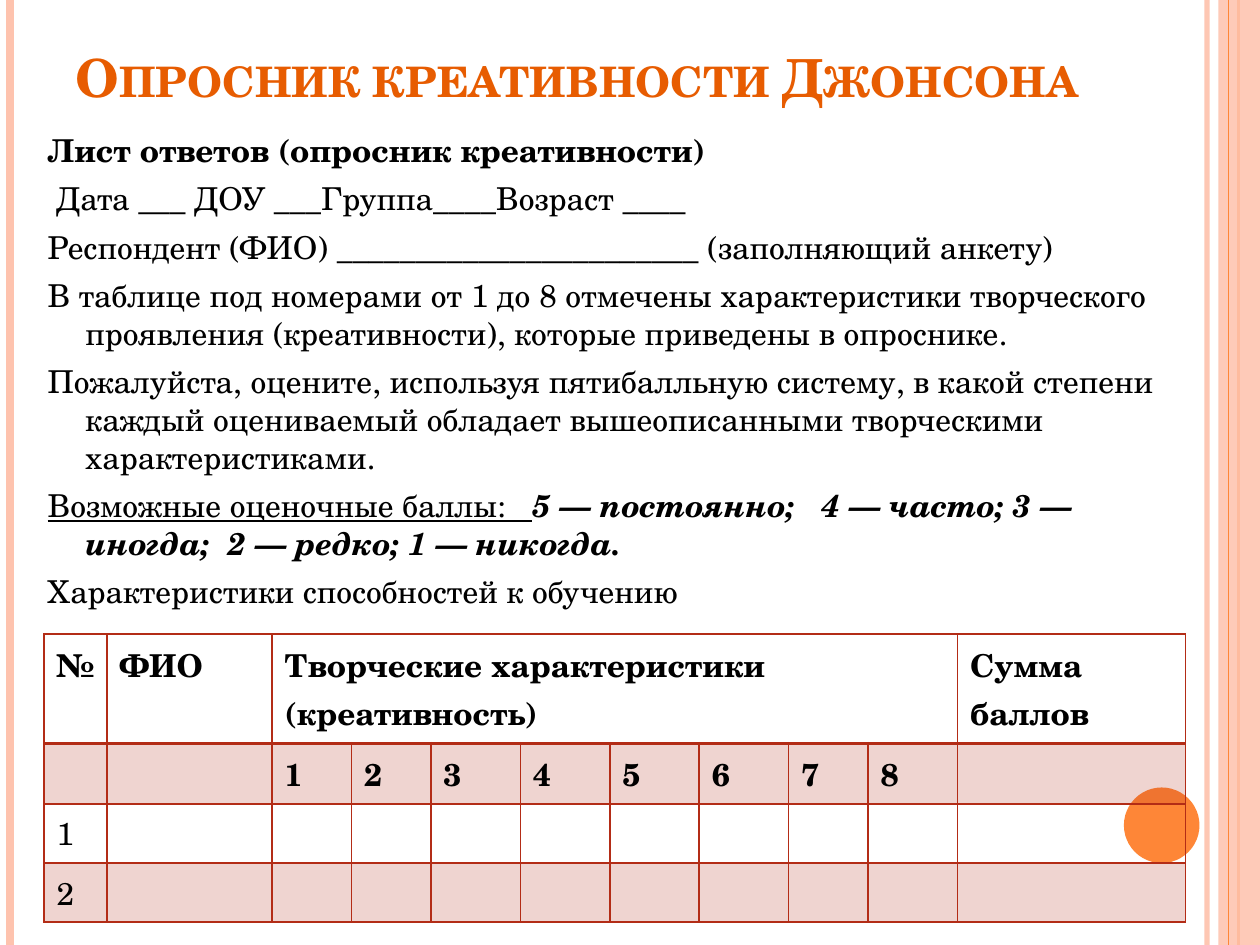
from dataclasses import dataclass

from lxml import etree
from pptx import Presentation
from pptx import util as u
from pptx.dml.color import RGBColor
from pptx.enum import shapes, text
from pptx.oxml.ns import qn


@dataclass(frozen=True)
class Theme:
    font: str = "TeX Gyre Schola"
    title: str = "E75C01"
    body: str = "000000"
    pink: str = "FEC3AE"
    orange: str = "FE8637"
    red: str = "B32C16"
    title_size: int = 30
    body_size: int = 18


THEME = Theme()
BOLD = {"bold": True}
BOLD_ITALIC = {"bold": True, "italic": True}
UNDERLINE = {"underline": True}

# Each paragraph is a list of (words, style) runs
BODY = [
    [("Лист ответов (опросник креативности)", BOLD)],
    [(" Дата ___ ДОУ ___Группа____Возраст ____", {})],
    [("Респондент (ФИО) _______________________ (заполняющий анкету)", {})],
    [("В таблице под номерами от 1 до 8 отмечены характеристики творческого "
      "проявления (креативности), которые приведены в опроснике.", {})],
    [("Пожалуйста, оцените, используя пятибалльную систему, в какой степени "
      "каждый оцениваемый обладает вышеописанными творческими "
      "характеристиками.", {})],
    [("Возможные оценочные баллы:   ", UNDERLINE),
     ("5 — постоянно;   4 — часто; 3 — иногда;  2 — редко; 1 — никогда.",
      BOLD_ITALIC)],
    [("Характеристики способностей к обучению", {})],
]

COLUMN_WIDTHS = [0.5, 1.31, 0.63, 0.63, 0.71, 0.71, 0.71, 0.71, 0.63, 0.71, 1.81]
ROW_HEIGHTS = [0.87, 0.48, 0.47, 0.47]
FIRST_SCORE, LAST_SCORE, TOTAL = 2, 9, 10
TABLE_ROWS = [
    {0: "№", 1: "ФИО", FIRST_SCORE: "Творческие характеристики (креативность)",
     TOTAL: "Сумма  баллов"},
    {FIRST_SCORE + i: str(i + 1) for i in range(8)},
    {0: "1"},
    {0: "2"},
]


def set_alpha(fill_parent, percent):
    """Make the solid fill directly inside the given element translucent."""
    color = fill_parent.find(qn("a:solidFill")).find(qn("a:srgbClr"))
    etree.SubElement(color, qn("a:alpha"), val=str(percent * 1000))


def add_run(paragraph, words, size, color, bold=False, italic=False, underline=False):
    run = paragraph.add_run()
    run.text = words
    font = run.font
    font.name, font.size = THEME.font, u.Pt(size)
    font.color.rgb = RGBColor.from_string(color)
    font.bold, font.italic, font.underline = bold, italic, underline
    return run


def add_stripe(slide, x, width, color, alpha=100):
    line = slide.shapes.add_connector(
        shapes.MSO_CONNECTOR.STRAIGHT,
        u.Inches(x), u.Inches(0), u.Inches(x), u.Inches(7.5))
    line.line.width = u.Pt(width)
    line.line.color.rgb = RGBColor.from_string(color)
    properties = line._element.spPr
    etree.SubElement(properties, qn("a:effectLst"))
    if alpha < 100:
        set_alpha(properties.find(qn("a:ln")), alpha)


def add_plain_shape(slide, kind, left, top, width, height, color, alpha=100):
    shape = slide.shapes.add_shape(
        kind, u.Inches(left), u.Inches(top), u.Inches(width), u.Inches(height))
    shape.shadow.inherit = False
    shape.fill.solid()
    shape.fill.fore_color.rgb = RGBColor.from_string(color)
    shape.line.fill.background()
    if alpha < 100:
        set_alpha(shape._element.spPr, alpha)


def add_text_frame(slide, left, top, width, height, anchor):
    box = slide.shapes.add_textbox(
        u.Inches(left), u.Inches(top), u.Inches(width), u.Inches(height))
    frame = box.text_frame
    frame.word_wrap = True
    frame.vertical_anchor = anchor
    return frame


def add_title(slide):
    frame = add_text_frame(slide, 0.5, 0.3, 8.17, 0.61, text.MSO_ANCHOR.BOTTOM)
    run = add_run(frame.paragraphs[0], "Опросник креативности Джонсона",
                  THEME.title_size, THEME.title, bold=True)
    run.font._element.set("cap", "small")


def add_body(slide):
    frame = add_text_frame(slide, 0.28, 0.99, 9.13, 5.35, text.MSO_ANCHOR.TOP)
    for index, runs in enumerate(BODY):
        paragraph = frame.add_paragraph() if index else frame.paragraphs[0]
        paragraph.space_before = u.Pt(6)
        indent = u.Inches(0.3)
        properties = paragraph._p.get_or_add_pPr()
        properties.set("marL", str(indent))
        properties.set("indent", str(-indent))
        for words, style in runs:
            add_run(paragraph, words, THEME.body_size, THEME.body, **style)


def set_borders(cell, top, bottom):
    properties = cell._tc.get_or_add_tcPr()
    for side, width in (("L", 1), ("R", 1), ("T", top), ("B", bottom)):
        line = etree.SubElement(properties, qn(f"a:ln{side}"), w=str(u.Pt(width)))
        fill = etree.SubElement(line, qn("a:solidFill"))
        etree.SubElement(fill, qn("a:srgbClr"), val=THEME.red)


def fill_cell(cell, words, row):
    set_borders(cell, top=2 if row == 1 else 1, bottom=2 if row == 0 else 1)
    # Every second row is tinted
    if row % 2:
        cell.fill.solid()
        cell.fill.fore_color.rgb = RGBColor.from_string(THEME.red)
        set_alpha(cell._tc.tcPr, 20)
    else:
        cell.fill.background()
    if words:
        add_run(cell.text_frame.paragraphs[0], words,
                THEME.body_size, THEME.body, bold=row < 2)


def add_score_table(slide):
    table = slide.shapes.add_table(
        len(ROW_HEIGHTS), len(COLUMN_WIDTHS), u.Inches(0.35), u.Inches(5.03),
        u.Inches(sum(COLUMN_WIDTHS)), u.Inches(sum(ROW_HEIGHTS))).table
    table.first_row = table.horz_banding = False
    for column, width in zip(table.columns, COLUMN_WIDTHS):
        column.width = u.Inches(width)
    for row, height in zip(table.rows, ROW_HEIGHTS):
        row.height = u.Inches(height)
    table.cell(0, FIRST_SCORE).merge(table.cell(0, LAST_SCORE))
    for row, words in enumerate(TABLE_ROWS):
        for column in range(len(COLUMN_WIDTHS)):
            fill_cell(table.cell(row, column), words.get(column), row)


def add_decoration(slide):
    add_stripe(slide, 9.58, 3, THEME.pink, alpha=93)
    add_stripe(slide, 0.08, 4.5, THEME.pink)
    add_stripe(slide, 9.83, 1.5, THEME.orange)
    add_plain_shape(slide, shapes.MSO_SHAPE.RECTANGLE,
                    9.67, 0, 0.33, 7.5, THEME.pink, alpha=87)
    add_stripe(slide, 9.75, 0.75, THEME.orange)
    add_plain_shape(slide, shapes.MSO_SHAPE.OVAL, 8.92, 6.25, 0.6, 0.6, THEME.orange)


def main():
    presentation = Presentation()
    presentation.slide_width, presentation.slide_height = u.Inches(10), u.Inches(7.5)
    slide = presentation.slides.add_slide(presentation.slide_layouts[6])
    add_decoration(slide)
    add_title(slide)
    add_body(slide)
    add_score_table(slide)
    presentation.save("out.pptx")


if __name__ == "__main__":
    main()
